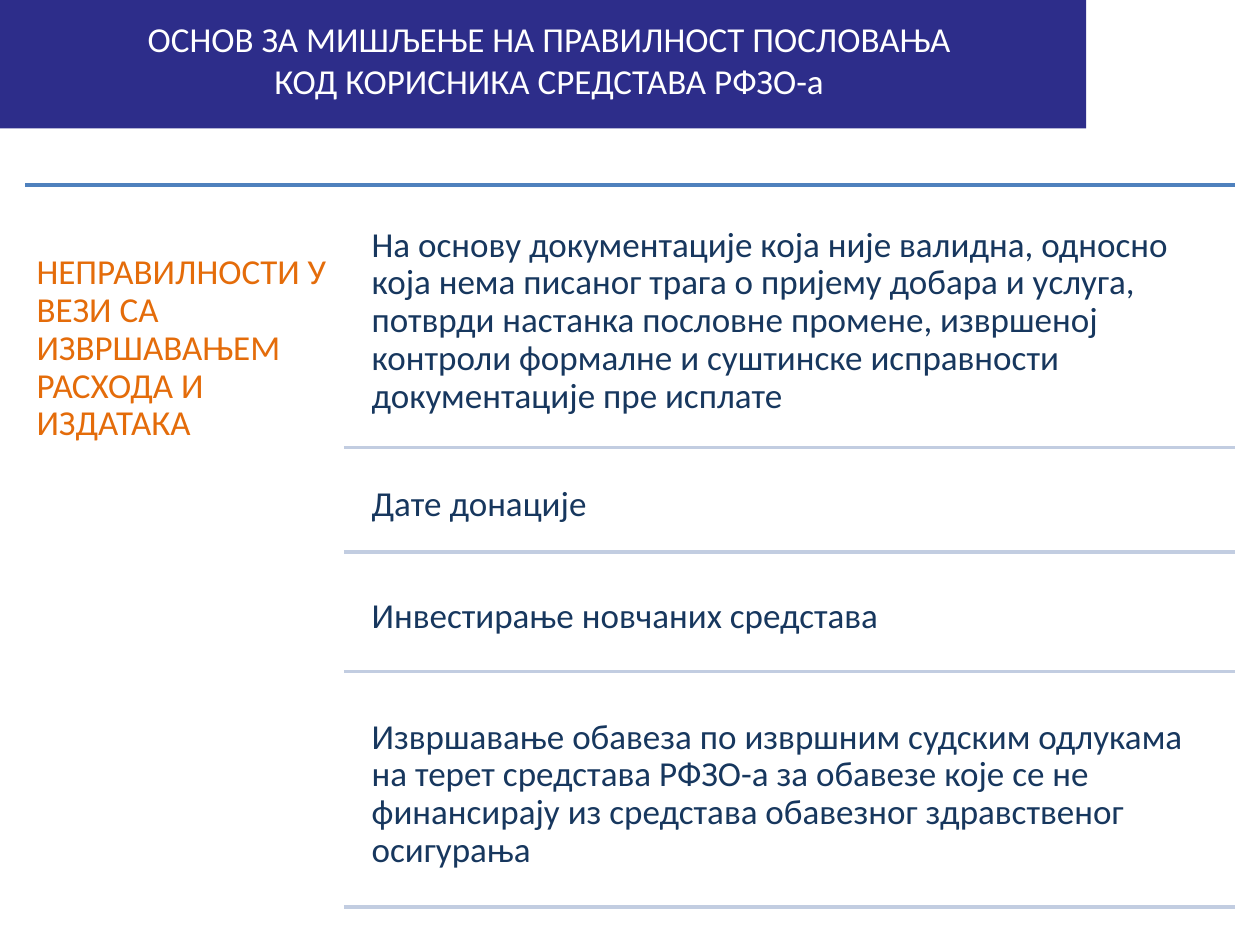
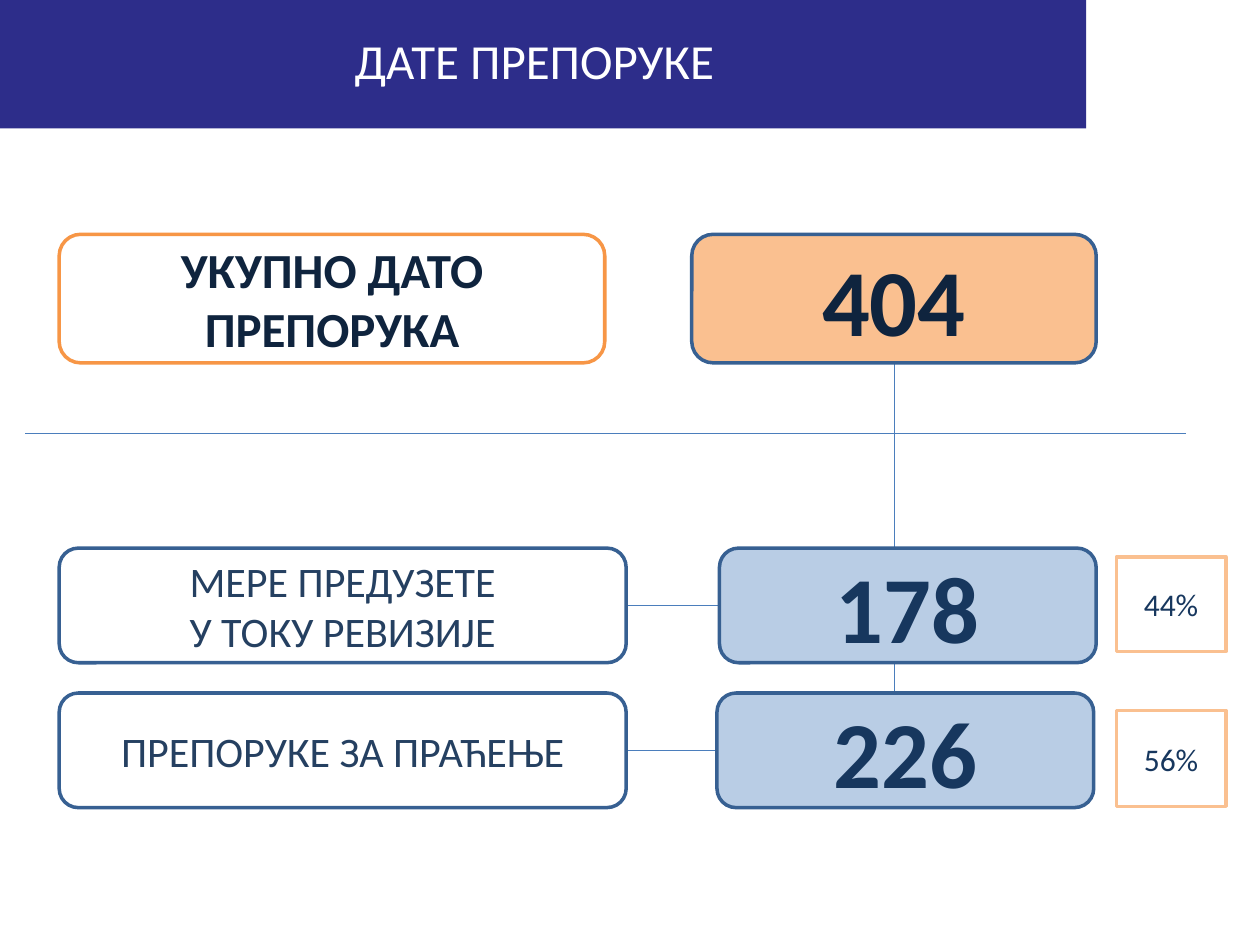
from pptx import Presentation
from pptx.dml.color import RGBColor
from pptx.enum import shapes, text
from pptx.oxml import ns
from pptx.util import Inches, Pt
from lxml import etree

FONT = "Calibri"
BAND, WHITE = "2D2D8A", "FFFFFF"
NAVY, DARK, SLATE = "17375E", "0F243E", "254061"
ORANGE, PEACH, AMBER = "E46C0A", "FAC090", "F79646"
OUTLINE, PALE_BLUE = "376092", "B9CDE5"
TOP_RULE, ROW_RULE, LINK = "4F81BD", "C2CDE1", "4B7EBC"


def colour(value):
    return RGBColor.from_string(value)


def write(shape, words, size, ink, bold=False, align=text.PP_ALIGN.CENTER,
          anchor=text.MSO_ANCHOR.MIDDLE, inset=None, spacing=None):
    """Fill a shape with text in one style."""
    frame = shape.text_frame
    frame.text = words
    frame.word_wrap = True
    frame.vertical_anchor = anchor
    if inset is not None:
        frame.margin_left = frame.margin_right = Inches(inset)
        frame.margin_top = frame.margin_bottom = Inches(inset)
    for para in frame.paragraphs:
        para.alignment = align
        if spacing:
            para.line_spacing = spacing
        for span in para.runs:
            span.font.name = FONT
            span.font.size = Pt(size)
            span.font.bold = bold
            span.font.color.rgb = colour(ink)


def add_box(page, kind, box, fill, outline=None):
    shape = page.shapes.add_shape(kind, *map(Inches, box))
    shape.shadow.inherit = False
    shape.fill.solid()
    shape.fill.fore_color.rgb = colour(fill)
    if outline:
        shape.line.color.rgb = colour(outline)
        shape.line.width = Pt(2)
    else:
        shape.line.fill.background()
    return shape


def add_line(page, start, end, ink, width):
    line = page.shapes.add_connector(
        shapes.MSO_CONNECTOR.STRAIGHT, *map(Inches, (*start, *end)))
    line.line.color.rgb = colour(ink)
    line.line.width = Pt(width)
    etree.SubElement(line.element.spPr, ns.qn("a:effectLst"))


def add_text(page, box, words, ink, anchor, inset):
    shape = page.shapes.add_textbox(*map(Inches, box))
    write(shape, words, 20, ink, align=text.PP_ALIGN.LEFT, anchor=anchor,
          inset=inset, spacing=0.9)


def add_page(deck, title, size, title_box):
    """Start a slide with the title on the shared band."""
    page = deck.slides.add_slide(deck.slide_layouts[5])
    band = add_box(page, shapes.MSO_SHAPE.RECTANGLE, (-0.02, 0, 8.64, 1.02), BAND)
    band.element.getparent().insert(2, band.element)  # behind the title
    heading = page.shapes.title
    heading.left, heading.top, heading.width, heading.height = map(Inches, title_box)
    write(heading, title, size, WHITE)
    return page


def add_findings(page, box, category, findings):
    """Category on the left, ruled rows of findings on the right."""
    left, top, width, height = box
    right, gap, drop = left + width, 0.08, 0.46
    add_line(page, (left, top), (right, top), TOP_RULE, 2)
    add_text(page, (left, top + drop, 2.54, height - drop), category, ORANGE,
             text.MSO_ANCHOR.TOP, 0.09)
    rule_left, text_left = left + 2.53, left + 2.67
    for words, row_height in findings:
        add_text(page, (text_left, top + gap, right - text_left, row_height), words,
                 NAVY, text.MSO_ANCHOR.MIDDLE, 0.08)
        top += gap + row_height
        add_line(page, (rule_left, top), (right, top), ROW_RULE, 2)


def add_total(page, box, label, value):
    """Label and grand total, side by side."""
    left, top, width, height = box
    rounded = shapes.MSO_SHAPE.ROUNDED_RECTANGLE
    total = add_box(page, rounded, (left + 5.02, top, width - 5.02, height), PEACH, OUTLINE)
    write(total, value, 54, DARK, bold=True)
    caption = add_box(page, rounded, (left, top, 4.33, height), WHITE, AMBER)
    write(caption, label, 28, DARK, bold=True)


def add_share(page, box, label, value, percent, percent_box):
    """Label joined to its value, with the percentage beside it."""
    left, top, width, height = box
    label_width, value_width = 4.5, 2.99
    value_left, middle = left + width - value_width, top + height / 2
    rounded = shapes.MSO_SHAPE.ROUNDED_RECTANGLE
    add_line(page, (left + label_width, middle), (value_left, middle), LINK, 0.75)
    parts = (
        (rounded, (left, top, label_width, height), WHITE, OUTLINE, label, 24, SLATE),
        (rounded, (value_left, top, value_width, height), PALE_BLUE, OUTLINE, value, 54, NAVY),
        (shapes.MSO_SHAPE.RECTANGLE, percent_box, WHITE, PEACH, percent, 18, NAVY),
    )
    for kind, place, fill, outline, words, size, ink in parts:
        write(add_box(page, kind, place, fill, outline), words, size, ink, bold=size == 54)


def findings_slide(deck):
    page = add_page(
        deck, "ОСНОВ ЗА МИШЉЕЊЕ НА ПРАВИЛНОСТ ПОСЛОВАЊА\nКОД КОРИСНИКА СРЕДСТАВА РФЗО-а",
        20, (0, 0.13, 8.72, 0.69))
    add_findings(
        page, (0.2, 1.47, 9.6, 5.83),
        "НЕПРАВИЛНОСТИ У ВЕЗИ СА ИЗВРШАВАЊЕМ РАСХОДА И ИЗДАТАКА",
        (("На основу документације која није валидна, односно која нема писаног трага "
          "о пријему добара и услуга, потврди настанка пословне промене, извршеној "
          "контроли формалне и суштинске исправности документације пре исплате", 2),
         ("Дате донације", 0.75),
         ("Инвестирање новчаних средстава", 0.87),
         ("Извршавање обавеза по извршним судским одлукама на терет средстава РФЗО-а "
          "за обавезе које се не финансирају из средстава обавезног здравственог "
          "осигурања", 1.79)))


def recommendations_slide(deck):
    page = add_page(deck, "ДАТЕ ПРЕПОРУКЕ", 28, (0.02, 0.13, 8.44, 0.69))
    # Trunk from the total down to its parts, and the divider
    add_line(page, (7.1, 2.88), (7.1, 5.95), LINK, 0.75)
    add_line(page, (0.2, 3.44), (9.41, 3.44), LINK, 0.75)
    add_total(page, (0.47, 1.86, 8.23, 1.02), "УКУПНО ДАТО ПРЕПОРУКА", "404")
    add_share(page, (0.47, 4.35, 8.23, 0.91), "МЕРЕ ПРЕДУЗЕТЕ\nУ ТОКУ РЕВИЗИЈЕ",
              "178", "44%", (8.86, 4.42, 0.87, 0.75))
    add_share(page, (0.47, 5.5, 8.21, 0.91), "ПРЕПОРУКЕ ЗА ПРАЋЕЊЕ",
              "226", "56%", (8.86, 5.64, 0.87, 0.76))


def main():
    deck = Presentation()
    deck.slide_width, deck.slide_height = Inches(10), Inches(7.5)
    findings_slide(deck)
    recommendations_slide(deck)
    deck.save("out.pptx")


if __name__ == "__main__":
    main()
